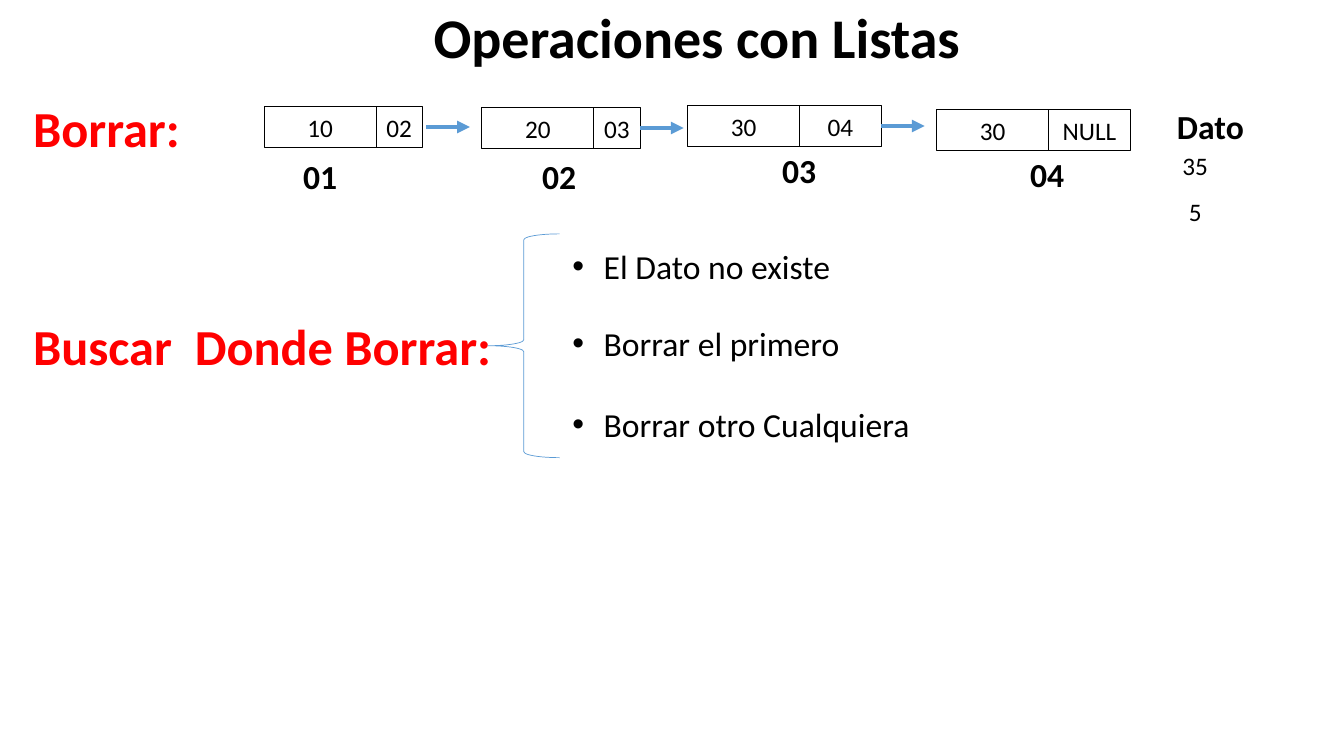
"""Build the slide on deleting from a linked list."""
from lxml.etree import SubElement
from pptx import Presentation
from pptx.dml.color import RGBColor
from pptx.enum.shapes import MSO_CONNECTOR, MSO_SHAPE
from pptx.enum.text import MSO_ANCHOR, MSO_AUTO_SIZE, PP_ALIGN
from pptx.oxml.ns import qn
from pptx.util import Inches, Pt

BLACK = RGBColor(0x00, 0x00, 0x00)
RED = RGBColor(0xFF, 0x00, 0x00)
BLUE = RGBColor(0x5B, 0x9B, 0xD5)


class ListSlide:
    """Hold the style and the slide, and draw each kind of element."""

    font_name = "Calibri"
    value_width = 1.11
    cell_height = 0.4

    def __init__(self, slide):
        self.slide = slide

    def fill_text(self, shape, text, size, color=BLACK, bold=False,
                  align=PP_ALIGN.LEFT, anchor=MSO_ANCHOR.TOP, wrap=True, bullet=False):
        frame = shape.text_frame
        frame.auto_size = MSO_AUTO_SIZE.NONE
        frame.word_wrap = wrap
        frame.vertical_anchor = anchor
        paragraph = frame.paragraphs[0]
        paragraph.alignment = align
        if bullet:
            properties = paragraph._p.get_or_add_pPr()
            properties.set("marL", str(Inches(0.31)))
            properties.set("indent", str(Inches(-0.31)))
            SubElement(properties, qn("a:buFont"), typeface="Arial")
            SubElement(properties, qn("a:buChar"), char="•")
        run = paragraph.add_run()
        run.text = text
        run.font.name = self.font_name
        run.font.size = Pt(size)
        run.font.bold = bold
        run.font.color.rgb = color

    def title(self, text, left, top, width, height):
        shape = self.slide.shapes.title
        shape.left, shape.top = Inches(left), Inches(top)
        shape.width, shape.height = Inches(width), Inches(height)
        self.fill_text(shape, text, 40, bold=True)

    def text(self, text, left, top, width, height, size, **style):
        shape = self.slide.shapes.add_textbox(
            Inches(left), Inches(top), Inches(width), Inches(height))
        self.fill_text(shape, text, size, **style)

    def outline(self, kind, left, top, width, height, color, weight):
        shape = self.slide.shapes.add_shape(
            kind, Inches(left), Inches(top), Inches(width), Inches(height))
        shape.shadow.inherit = False
        shape.fill.background()
        shape.line.color.rgb = color
        shape.line.width = Pt(weight)
        return shape

    def cell(self, text, left, top, width):
        shape = self.outline(MSO_SHAPE.RECTANGLE, left, top, width,
                             self.cell_height, BLACK, 0.75)
        self.fill_text(shape, text, 18, align=PP_ALIGN.CENTER,
                       anchor=MSO_ANCHOR.MIDDLE, wrap=False)
        return shape

    def node(self, value, pointer, left, top, pointer_width):
        self.cell(value, left, top, self.value_width)
        return self.cell(pointer, left + self.value_width, top, pointer_width)

    def arrow(self, cell, gap, length=0.43):
        start = cell.left + cell.width + Inches(gap)
        middle = cell.top + cell.height // 2
        connector = self.slide.shapes.add_connector(
            MSO_CONNECTOR.STRAIGHT, start, middle, start + Inches(length), middle)
        if not gap:
            connector.begin_connect(cell, 3)
        connector.line.color.rgb = BLUE
        connector.line.width = Pt(3)
        SubElement(connector.line._get_or_add_ln(), qn("a:tailEnd"), type="triangle")
        SubElement(connector._element.spPr, qn("a:effectLst"))


def main():
    presentation = Presentation()
    presentation.slide_width = Inches(13.33)
    presentation.slide_height = Inches(7.5)
    page = ListSlide(presentation.slides.add_slide(presentation.slide_layouts[5]))

    page.title("Operaciones con Listas", 4.2, -0.03, 7.01, 0.77)
    page.text("Borrar:", 0.23, 0.91, 2.06, 0.71, 36, color=RED, bold=True)
    page.text("Buscar  Donde Borrar:", 0.23, 3.08, 4.81, 0.71, 36, color=RED, bold=True)

    nodes = [
        ("10", "02", 2.62, 1.06, 0.46, "01", 2.82, 1.5, 0.04),
        ("20", "03", 4.78, 1.07, 0.46, "02", 5.19, 1.5, 0),
        ("30", "04", 6.82, 1.05, 0.81, "03", 7.57, 1.44, 0),
        ("30", "NULL", 9.29, 1.09, 0.81, "04", 10.03, 1.48, None),
    ]
    for value, pointer, left, top, width, address, address_left, address_top, gap in nodes:
        pointer_cell = page.node(value, pointer, left, top, width)
        page.text(address, address_left, address_top, 0.71, 0.5, 24,
                  bold=True, align=PP_ALIGN.CENTER)
        if gap is not None:
            page.arrow(pointer_cell, gap)

    page.text("Dato", 11.37, 1, 1.27, 0.5, 24, bold=True, align=PP_ALIGN.CENTER)
    for datum, top in (("35", 1.44), ("5", 1.9)):
        page.text(datum, 11.59, top, 0.53, 0.4, 18, align=PP_ALIGN.CENTER)

    page.outline(MSO_SHAPE.LEFT_BRACE, 4.84, 2.32, 0.71, 2.22, BLUE, 0.5)
    cases = (("El Dato no existe", 2.39), ("Borrar el primero", 3.15),
             ("Borrar otro Cualquiera", 3.96))
    for case, top in cases:
        page.text(case, 5.58, top, 5.44, 0.5, 24, bullet=True)

    presentation.save("out.pptx")


if __name__ == "__main__":
    main()
